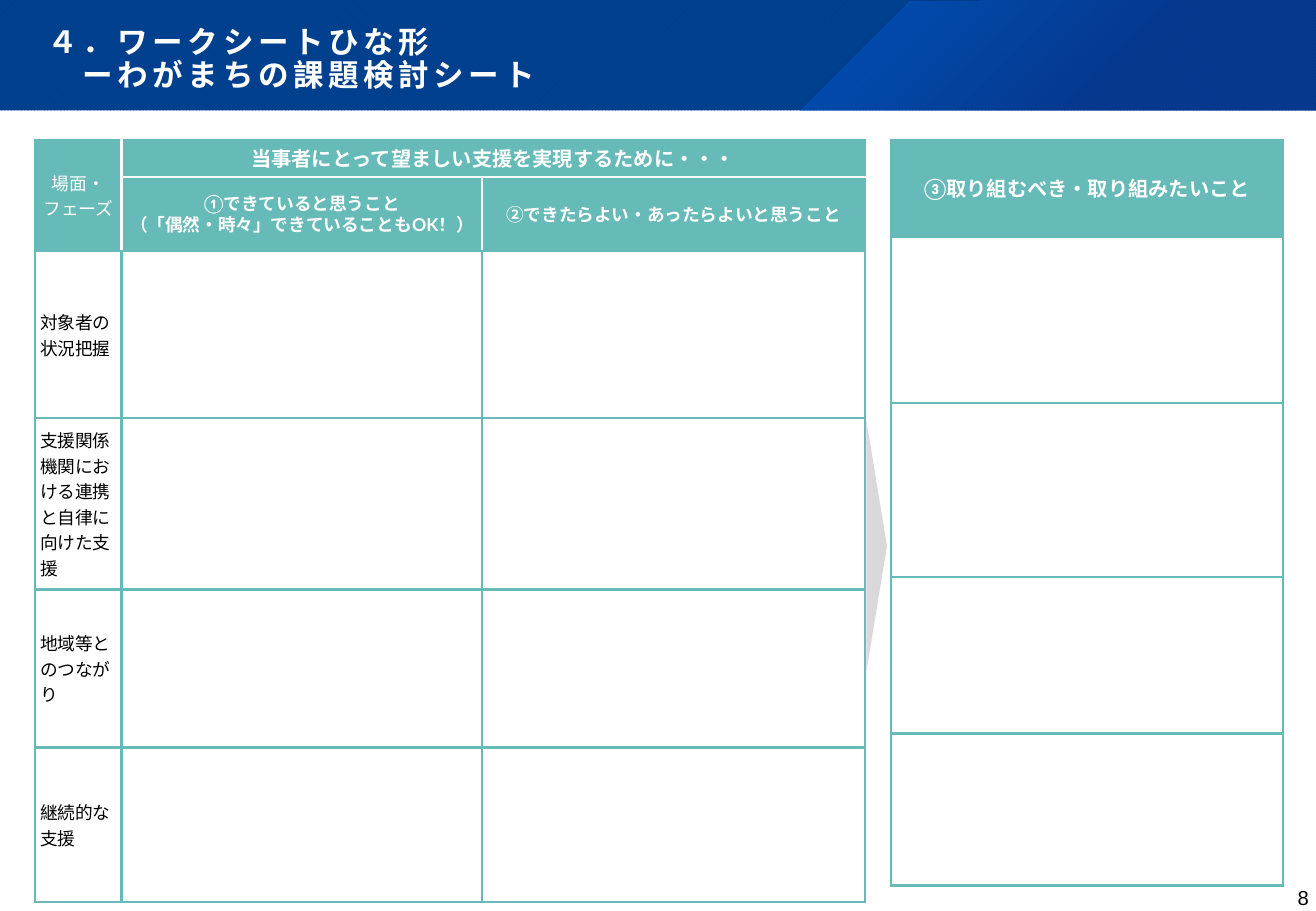
from lxml import etree
from pptx import Presentation
from pptx import util as u
from pptx.dml.color import RGBColor
from pptx.enum import dml, shapes, text
from pptx.oxml import parse_xml
from pptx.oxml.ns import nsdecls, qn

COLORS = {
    "teal": "66BAB7", "white": "FFFFFF", "black": "000000", "arrow": "D9D9D9",
    "band_dark": "003579", "band": "004292", "glow": "0064DF", "glow_end": "0C338E",
}
LATO, NOTO, ARIAL = "Lato", "Noto Sans CJK JP", "Arial"
MIDDLE = text.MSO_ANCHOR.MIDDLE
CENTER, RIGHT, LEFT = text.PP_ALIGN.CENTER, text.PP_ALIGN.RIGHT, text.PP_ALIGN.LEFT


def rgb(name):
    return RGBColor.from_string(COLORS[name])


class Sheet:
    """Holds the style and the current slide."""

    def __init__(self, prs):
        self.s = prs.slides.add_slide(prs.slide_layouts[6])

    def add_lines(self, tf, lines, font, size, color, bold=False, align=LEFT,
                  spacing=None, tracking=None):
        for i, line in enumerate(lines):
            p = tf.paragraphs[0] if i == 0 else tf.add_paragraph()
            p.alignment = align
            if spacing:
                p.line_spacing = spacing
            for j, part in enumerate(line.split("\n")):
                if j:
                    p.add_line_break()
                r = p.add_run()
                r.text = part
                fmt = {"name": font, "size": u.Pt(size), "bold": bold}
                for key, value in fmt.items():
                    setattr(r.font, key, value)
                r.font.color.rgb = rgb(color)
                rpr = r._r.get_or_add_rPr()
                etree.SubElement(rpr, qn("a:ea")).set("typeface", font)
                if tracking:
                    rpr.set("spc", str(tracking))

    def textbox(self, box, lines, insets=(0, 0, 0, 0), anchor=text.MSO_ANCHOR.TOP, **style):
        tf = self.s.shapes.add_textbox(*map(u.Inches, box)).text_frame
        tf.word_wrap = True
        tf.vertical_anchor = anchor
        for side, inset in zip(("left", "top", "right", "bottom"), insets):
            setattr(tf, f"margin_{side}", u.Inches(inset))
        self.add_lines(tf, lines, **style)

    def plain(self, sp):
        sp.shadow.inherit = False
        sp.line.fill.background()
        return sp

    def shape(self, kind, box):
        return self.plain(self.s.shapes.add_shape(kind, *map(u.Inches, box)))

    def freeform(self, points):
        points = [(u.Inches(x), u.Inches(y)) for x, y in points]
        fb = self.s.shapes.build_freeform(*points[0], scale=1.0)
        fb.add_line_segments(points[1:], close=True)
        return self.plain(fb.convert_to_shape())

    def radial(self, sp, stops):
        """Circular gradient from the top left; stops are (position, colour, alpha)."""
        gs = "".join(
            f'<a:gs pos="{pos * 1000}"><a:srgbClr val="{COLORS[color]}">'
            f'<a:alpha val="{alpha * 1000}"/></a:srgbClr></a:gs>'
            for pos, color, alpha in stops)
        sp.fill.background()
        old = sp._element.spPr.find(qn("a:noFill"))
        old.getparent().replace(old, parse_xml(
            f'<a:gradFill {nsdecls("a")} rotWithShape="1"><a:gsLst>{gs}</a:gsLst>'
            '<a:path path="circle"><a:fillToRect r="100000" b="100000"/></a:path>'
            '</a:gradFill>'))

    def border(self, cell, sides):
        tcpr = cell._tc.get_or_add_tcPr()
        for side in "LRTB":
            tcpr.append(parse_xml(
                f'<a:ln{side} {nsdecls("a")} w="{u.Pt(1.5)}"><a:solidFill>'
                f'<a:srgbClr val="{COLORS[sides[side]]}"/></a:solidFill></a:ln{side}>'))

    def table(self, x, y, cols, rows, head_rows, cells, spans=()):
        """cells maps (row, col) to (lines, style); spans are (r0, c0, r1, c1)."""
        tbl = self.s.shapes.add_table(
            len(rows), len(cols), *map(u.Inches, (x, y, sum(cols), sum(rows)))).table
        tbl.first_row = tbl.horz_banding = False
        for col, width in zip(tbl.columns, cols):
            col.width = u.Inches(width)
        for row, height in zip(tbl.rows, rows):
            row.height = u.Inches(height)
        region = {(r, c): (r, c, r, c) for r in range(len(rows)) for c in range(len(cols))}
        for r0, c0, r1, c1 in spans:
            tbl.cell(r0, c0).merge(tbl.cell(r1, c1))
            for r in range(r0, r1 + 1):
                for c in range(c0, c1 + 1):
                    region[r, c] = (r0, c0, r1, c1)
        for (r, c), (r0, c0, r1, c1) in region.items():
            cell, head = tbl.cell(r, c), r < head_rows
            # Lines between two header cells are white, all others teal
            inner = {"L": c0 > 0, "R": c1 < len(cols) - 1,
                     "T": r0 > 0, "B": r1 < head_rows - 1}
            self.border(cell, {side: "white" if head and hit else "teal"
                               for side, hit in inner.items()})
            cell.fill.solid()
            cell.fill.fore_color.rgb = rgb("teal" if head else "white")
            cell.vertical_anchor = MIDDLE
            for side in ("left", "top", "right", "bottom"):
                setattr(cell, f"margin_{side}", u.Inches(0.04))
            if (r, c) in cells:
                lines, style = cells[r, c]
                self.add_lines(cell.text_frame, lines, **style)


def main():
    prs = Presentation()
    prs.slide_width, prs.slide_height = u.Inches(10.83), u.Inches(7.5)
    sheet = Sheet(prs)

    # Title band
    band_box = (0, 0, 10.83, 0.91)
    band = sheet.shape(shapes.MSO_SHAPE.RECTANGLE, band_box)
    band.fill.patterned()
    band.fill.pattern = dml.MSO_PATTERN.DARK_UPWARD_DIAGONAL
    band.fill.fore_color.rgb = rgb("band_dark")
    band.fill.back_color.rgb = rgb("band")
    glow = sheet.freeform([(7.49, 0.01), (10.84, 0), (10.84, 0.91), (6.58, 0.91)])
    sheet.radial(glow, [(0, "glow", 50), (62, "glow_end", 55)])
    sheet.textbox(band_box, ["４．ワークシートひな形\n　ーわがまちの課題検討シート"],
                  insets=(0.39, 0.36, 0.36, 0.14), anchor=text.MSO_ANCHOR.BOTTOM,
                  font=LATO, size=18.1, color="white", bold=True, spacing=0.9, tracking=270)

    # Page number
    sheet.textbox((10.08, 7.29, 0.69, 0.15), ["8"],
                  font=ARIAL, size=12, color="black", align=RIGHT)

    # Worksheet table
    heading = dict(font=LATO, size=12, color="white", bold=True, align=CENTER)
    subheading = {**heading, "size": 10.5}
    label = dict(font=NOTO, size=10.5, color="black")
    cells = {
        (0, 0): (["場面・", "フェーズ"], {**label, "color": "white", "align": CENTER}),
        (0, 1): (["当事者にとって望ましい支援を実現するために・・・"], heading),
        (1, 1): (["①できていると思うこと", "（「偶然・時々」できていることもOK！）"], subheading),
        (1, 2): (["②できたらよい・あったらよいと思うこと"], {**subheading, "font": NOTO}),
    }
    phases = ["対象者の状況把握", "支援関係機関における連携と自律に向けた支援",
              "地域等とのつながり", "継続的な支援"]
    for row, phase in enumerate(phases, start=2):
        cells[row, 0] = ([phase], label)
    sheet.table(0.29, 1.15, [0.71, 2.97, 3.15], [0.31, 0.47, 1.38, 1.41, 1.3, 1.27],
                2, cells, spans=[(0, 0, 1, 0), (0, 1, 0, 2)])

    # Action table
    sheet.table(7.33, 1.15, [3.23], [0.8, 1.37, 1.43, 1.29, 1.25], 1,
                {(0, 0): (["③取り組むべき・取り組みたいこと"], heading)})

    # Arrow between the tables
    arrow = sheet.shape(shapes.MSO_SHAPE.DOWN_ARROW, (6.18, 4.41, 2.07, 0.17))
    arrow.rotation = 270
    arrow.adjustments[0] = arrow.adjustments[1] = 1
    arrow.fill.solid()
    arrow.fill.fore_color.rgb = rgb("arrow")

    prs.save("out.pptx")


if __name__ == "__main__":
    main()
